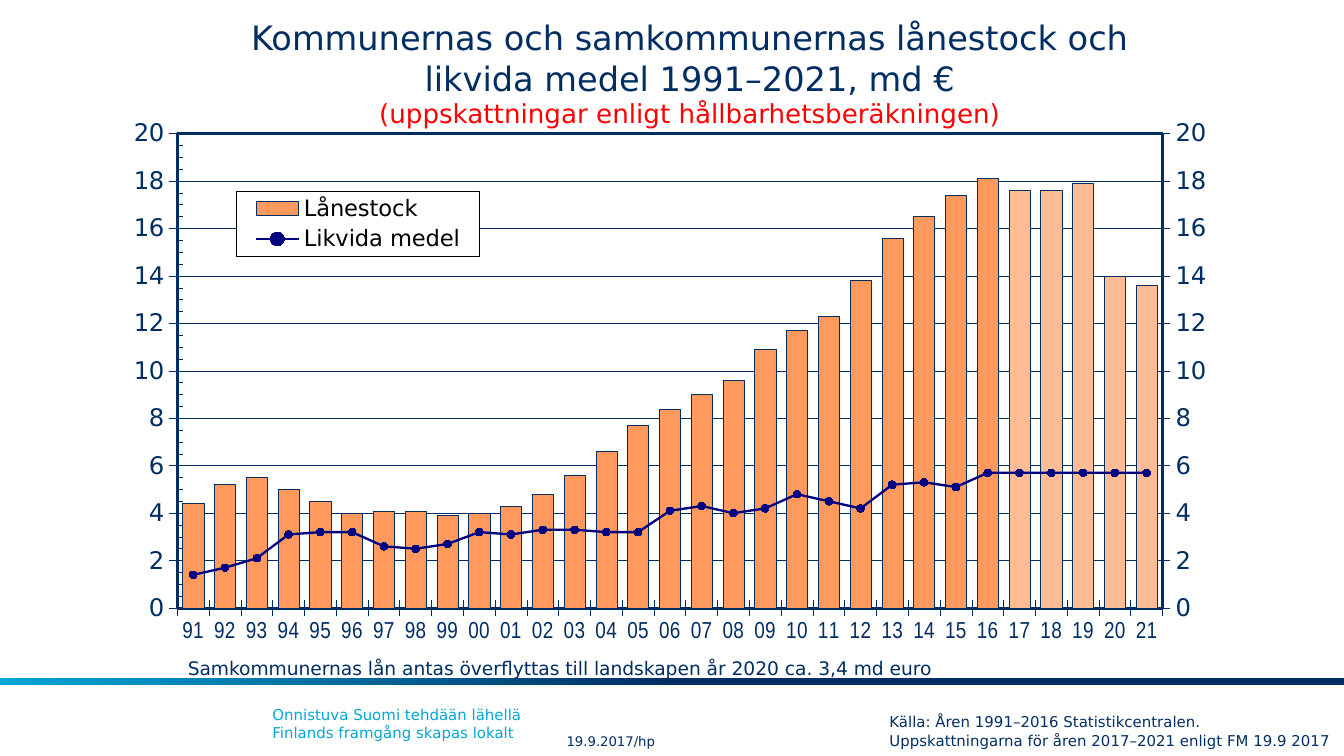
from copy import deepcopy
from pptx import Presentation, util as u
from pptx.chart import axis as ax, data as cd
from pptx.dml.color import RGBColor
from pptx.enum import chart as ch, dml, shapes, text
from pptx.oxml import parse_xml
from pptx.oxml.ns import qn, nsdecls

Cm, Pt = u.Cm, u.Pt
col = RGBColor.from_string
NAVY, CYAN, ORANGE, PEACH, BLUE = "002E63", "00A6D6", "FF995E", "FFBB94", "000080"
SANS = "DejaVu Sans"
NS = nsdecls("c", "a")


def write(par, words, size, hue):
    run = par.add_run()
    run.text = words
    run.font.size, run.font.name = Pt(size), SANS
    run.font.color.rgb = col(hue)


def layout(x, y, w, h, inner=""):
    return parse_xml(
        f'<c:layout {NS}><c:manualLayout>{inner}<c:xMode val="edge"/><c:yMode val="edge"/>'
        f'<c:x val="{x}"/><c:y val="{y}"/><c:w val="{w}"/><c:h val="{h}"/>'
        '</c:manualLayout></c:layout>')


prs = Presentation()
prs.slide_width, prs.slide_height = Cm(25.4), Cm(14.29)
slide = prs.slides.add_slide(prs.slide_layouts[5])

bar = slide.shapes.add_shape(shapes.MSO_SHAPE.RECTANGLE, 0, Cm(12.82), Cm(25.4), Cm(0.13))
bar.shadow.inherit = False
bar.line.fill.background()
bar.fill.gradient()
bar.fill.gradient_angle = 180
for stop, (pos, hue) in zip(bar.fill.gradient_stops, [(0.5, NAVY), (1, CYAN)]):
    stop.position = pos
    stop.color.rgb = col(hue)

loans = [4.4, 5.2, 5.5, 5, 4.5, 4, 4.1, 4.1, 3.9, 4, 4.3, 4.8, 5.6, 6.6, 7.7, 8.4,
         9, 9.6, 10.9, 11.7, 12.3, 13.8, 15.6, 16.5, 17.4, 18.1, 17.6, 17.6, 17.9, 14, 13.6]
cash = [1.4, 1.7, 2.1, 3.1, 3.2, 3.2, 2.6, 2.5, 2.7, 3.2, 3.1, 3.3, 3.3, 3.2, 3.2, 4.1,
        4.3, 4, 4.2, 4.8, 4.5, 4.2, 5.2, 5.3, 5.1, 5.7, 5.7, 5.7, 5.7, 5.7, 5.7]
data = cd.CategoryChartData(number_format="0.0")
data.categories = [f"{year % 100:02}" for year in range(1991, 2022)]
data.add_series("Lånestock", loans)
data.add_series("Likvida medel", cash)
chart = slide.shapes.add_chart(ch.XL_CHART_TYPE.COLUMN_CLUSTERED, Cm(2.06), Cm(2.16),
                               Cm(21.16), Cm(10.16), data).chart
chart.has_title = False
chart.font.size, chart.font.name = Pt(13), SANS
chart.font.color.rgb = col(NAVY)

cat, val = chart.category_axis, chart.value_axis
for axis, size, face in [(cat, 12.4, "Arial Narrow"), (val, 13, SANS)]:
    axis.major_tick_mark = ch.XL_TICK_MARK.CROSS
    axis.format.line.color.rgb = col(NAVY)
    axis.format.line.width = Pt(0.3)
    font = axis.tick_labels.font
    font.size, font.name, font.bold = Pt(size), face, False
    font.color.rgb = col(NAVY)
val.minimum_scale, val.maximum_scale = 0, 20
val.major_unit, val.minor_unit = 2, 0.5
val.minor_tick_mark = ch.XL_TICK_MARK.INSIDE
val.tick_labels.number_format = "0"
val.tick_labels.number_format_is_linked = False
grid = val.major_gridlines.format.line
grid.color.rgb = col(NAVY)
grid.width = Pt(0.25)
grid.dash_style = dml.MSO_LINE.ROUND_DOT

cols = chart.plots[0]
cols.gap_width = 50
cols.vary_by_categories = False
stock, moved = cols.series
forms = [(stock.format, ORANGE)]
forms += [(stock.points[i].format, PEACH) for i in range(26, 31)]
for form, hue in forms:
    form.fill.solid()
    form.fill.fore_color.rgb = col(hue)
    form.line.color.rgb = col(NAVY)
    form.line.width = Pt(0.25)

area = val._element.getparent()
ser = moved._element
for flag in ser.findall(qn("c:invertIfNegative")):
    ser.remove(flag)
line = parse_xml(f'<c:lineChart {NS}><c:grouping val="standard"/><c:varyColors val="0"/>'
                 '<c:marker val="1"/><c:axId val="501"/><c:axId val="502"/></c:lineChart>')
line.insert(2, ser)
area.find(qn("c:barChart")).addnext(line)

right, base = deepcopy(val._element), deepcopy(cat._element)
for node, own, other in [(right, "502", "501"), (base, "501", "502")]:
    node.find(qn("c:axId")).set("val", own)
    node.find(qn("c:crossAx")).set("val", other)
val._element.addnext(right)
right.addnext(base)
right.find(qn("c:axPos")).set("val", "r")
right.find(qn("c:crosses")).set("val", "max")
twin = ax.ValueAxis(right)
twin.has_major_gridlines = False
twin.minor_tick_mark = ch.XL_TICK_MARK.NONE
ax.CategoryAxis(base).visible = False

trend = chart.plots[1].series[0]
trend.smooth = False
trend.format.line.color.rgb = col(BLUE)
trend.format.line.width = Pt(1.25)
mark = trend.marker
mark.style, mark.size = ch.XL_MARKER_STYLE.CIRCLE, 4
mark.format.fill.solid()
mark.format.fill.fore_color.rgb = col(BLUE)
mark.format.line.color.rgb = col(BLUE)

for old in area.findall(qn("c:layout")):
    area.remove(old)
area.insert(0, layout(0.061, 0.036, 0.88, 0.883, '<c:layoutTarget val="inner"/>'))
area.append(parse_xml(f'<c:spPr {NS}><a:noFill/><a:ln w="19050"><a:solidFill>'
                      f'<a:srgbClr val="{NAVY}"/></a:solidFill></a:ln></c:spPr>'))

chart.has_legend = True
key = chart.legend
key.position = ch.XL_LEGEND_POSITION.RIGHT
key.include_in_layout = False
key.font.size, key.font.name = Pt(12.1), SANS
key.font.color.rgb = col("000000")
box = key._element
for old in box.findall(qn("c:layout")):
    box.remove(old)
box.insert(1, layout(0.114, 0.143, 0.217, 0.121))
box.find(qn("c:txPr")).addprevious(parse_xml(
    f'<c:spPr {NS}><a:solidFill><a:srgbClr val="FFFFFF"/></a:solidFill><a:ln w="3175">'
    '<a:solidFill><a:srgbClr val="000000"/></a:solidFill></a:ln></c:spPr>'))

title = slide.shapes.title
title.left, title.top, title.width, title.height = Cm(1.09), Cm(0.36), Cm(23.9), Cm(2.21)
frame = title.text_frame
frame.auto_size = text.MSO_AUTO_SIZE.NONE
frame.vertical_anchor = text.MSO_ANCHOR.BOTTOM
frame.margin_left = frame.margin_right = 0
par = frame.paragraphs[0]
par.alignment = text.PP_ALIGN.CENTER
write(par, "Kommunernas och samkommunernas lånestock och", 18, NAVY)
par.add_line_break()
write(par, "likvida medel 1991–2021, md €", 18, NAVY)
par.add_line_break()
write(par, "(uppskattningar enligt hållbarhetsberäkningen)", 14, "FF0000")

notes = [
    (4.9, 13.21, 16.61, 0.94, 8, CYAN, 1, "TOP",
     ["Onnistuva Suomi tehdään lähellä", "Finlands framgång skapas lokalt"]),
    (10.46, 13.74, 3.12, 0.61, 7.1, NAVY, 1, "TOP", ["19.9.2017/hp"]),
    (16.56, 13.26, 8.99, 1.04, 8, NAVY, 1.1, "BOTTOM",
     ["Källa: Åren 1991–2016 Statistikcentralen.",
      "Uppskattningarna för åren 2017–2021 enligt FM 19.9 2017"]),
    (3.3, 12.29, 15.06, 0.69, 10, NAVY, 1, "TOP",
     ["Samkommunernas lån antas överflyttas till landskapen år 2020 ca. 3,4 md euro"]),
]
for x, y, w, h, size, hue, space, side, lines in notes:
    frame = slide.shapes.add_textbox(Cm(x), Cm(y), Cm(w), Cm(h)).text_frame
    frame.word_wrap = True
    frame.vertical_anchor = text.MSO_ANCHOR[side]
    for i, words in enumerate(lines):
        par = frame.add_paragraph() if i else frame.paragraphs[0]
        par.line_spacing = space
        write(par, words, size, hue)

prs.save("out.pptx")
